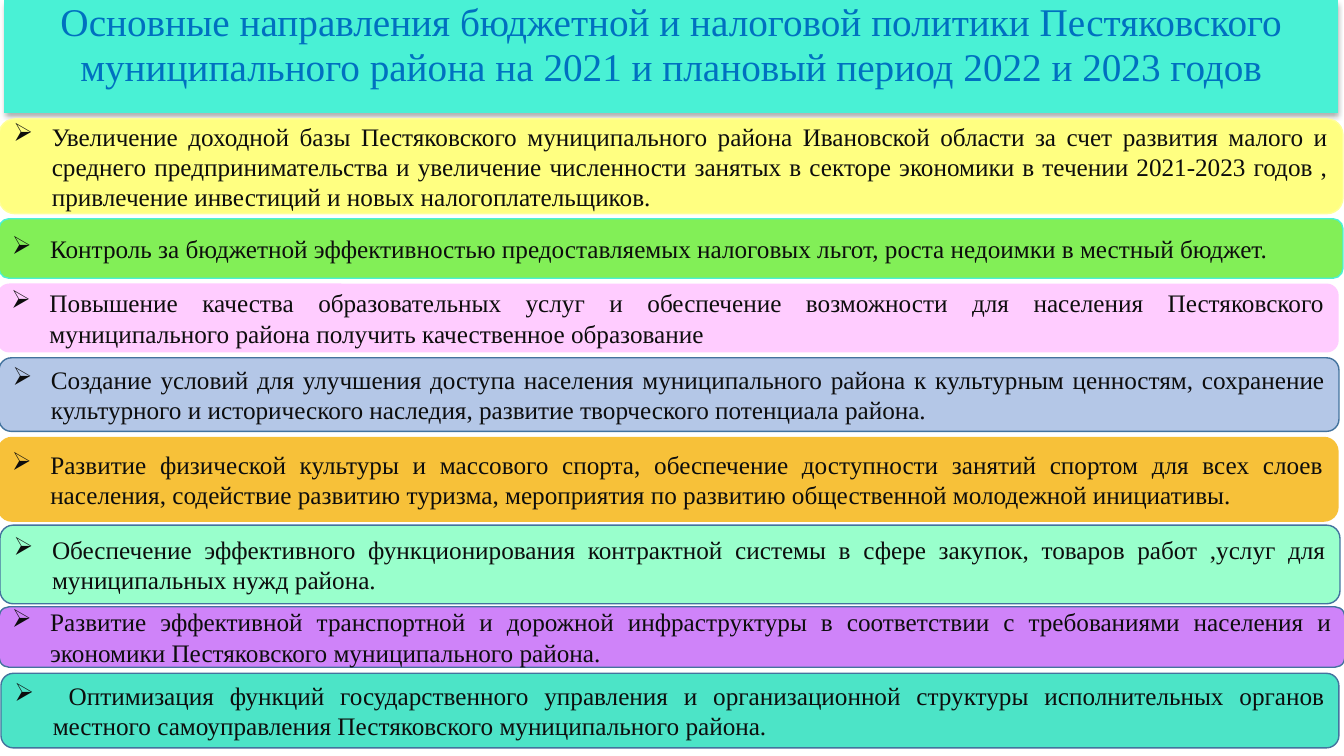
import pptx
import pptx.util
import pptx.dml.color
import pptx.enum.shapes
import pptx.enum.text
import pptx.oxml
import pptx.oxml.ns
from pptx.util import Inches

FONT = "Times New Roman"
NS = pptx.oxml.ns.nsdecls("a")


def rgb(code):
    return pptx.dml.color.RGBColor.from_string(code)


deck = pptx.Presentation()
deck.slide_width = Inches(13.33)
deck.slide_height = Inches(7.5)
slide = deck.slides.add_slide(deck.slide_layouts[5])

heading = slide.shapes.title
heading.left, heading.top = Inches(0.04), Inches(0)
heading.width, heading.height = Inches(13.23), Inches(1.12)
heading.fill.solid()
heading.fill.fore_color.rgb = rgb("49F1D5")
heading.shadow.inherit = False
heading._element.spPr.find(pptx.oxml.ns.qn("a:effectLst")).append(pptx.oxml.parse_xml(
    f'<a:outerShdw {NS} blurRad="44450" dist="27940" dir="5400000" algn="ctr" rotWithShape="0">'
    '<a:srgbClr val="000000"><a:alpha val="32000"/></a:srgbClr></a:outerShdw>'))
heading_text = heading.text_frame
heading_text.text = ("Основные направления бюджетной и налоговой политики Пестяковского "
                     "муниципального района на 2021 и плановый период 2022 и 2023 годов")
heading_text.word_wrap = True
heading_text.auto_size = pptx.enum.text.MSO_AUTO_SIZE.NONE
heading_text.vertical_anchor = pptx.enum.text.MSO_ANCHOR.TOP
heading_text.margin_top = Inches(0)
heading_line = heading_text.paragraphs[0]
heading_line.alignment = pptx.enum.text.PP_ALIGN.CENTER
heading_line.line_spacing = 0.96
heading_line.font.name = FONT
heading_line.font.size = pptx.util.Pt(28)
heading_line.font.color.rgb = rgb("0070C0")

directions = [
    (-0.01, 1.18, 13.33, 0.94, "FFFF81", "FFFF99",
     "Увеличение доходной базы Пестяковского муниципального района Ивановской области за счет "
     "развития малого и среднего предпринимательства и увеличение численности занятых в секторе "
     "экономики в течении 2021-2023 годов , привлечение инвестиций и новых налогоплательщиков."),
    (-0.01, 2.17, 13.33, 0.59, "82EF57", "49F1D5",
     "Контроль за бюджетной эффективностью предоставляемых налоговых льгот, "
     "роста недоимки в местный бюджет."),
    (-0.02, 2.82, 13.29, 0.67, "FFCCFF", "FFCCFF",
     "Повышение качества образовательных услуг и обеспечение возможности для населения "
     "Пестяковского муниципального района получить качественное образование"),
    (-0.01, 3.55, 13.29, 0.73, "B4C7E7", "43739E",
     "Создание условий для улучшения доступа населения муниципального района к культурным "
     "ценностям, сохранение культурного и исторического наследия, развитие творческого "
     "потенциала района."),
    (-0.02, 4.34, 13.29, 0.83, "F7C139", "F7C139",
     "Развитие физической культуры и массового спорта, обеспечение доступности занятий спортом "
     "для всех слоев населения, содействие развитию туризма, мероприятия по развитию "
     "общественной молодежной инициативы."),
    (0, 5.21, 13.29, 0.78, "99FFCC", "43739E",
     "Обеспечение эффективного функционирования контрактной системы в сфере закупок, товаров "
     "работ ,услуг для муниципальных нужд района."),
    (-0.01, 6.02, 13.35, 0.6, "CF83F9", "43739E",
     "Развитие эффективной транспортной и дорожной инфраструктуры в соответствии с "
     "требованиями населения и экономики Пестяковского муниципального района."),
    (0.01, 6.68, 13.27, 0.74, "4CE4C7", "43739E",
     " Оптимизация функций государственного управления и организационной структуры "
     "исполнительных органов местного самоуправления Пестяковского муниципального района."),
]

for left, top, width, height, fill, outline, wording in directions:
    band = slide.shapes.add_shape(
        pptx.enum.shapes.MSO_SHAPE.ROUNDED_RECTANGLE,
        Inches(left), Inches(top), Inches(width), Inches(height))
    band.shadow.inherit = False
    band.fill.solid()
    band.fill.fore_color.rgb = rgb(fill)
    band.line.color.rgb = rgb(outline)
    band.line.width = pptx.util.Pt(1)
    band.text_frame.word_wrap = True
    band.text_frame.vertical_anchor = pptx.enum.text.MSO_ANCHOR.MIDDLE
    direction = band.text_frame.paragraphs[0]
    direction.text = wording
    direction.alignment = pptx.enum.text.PP_ALIGN.JUSTIFY
    layout = direction._p.get_or_add_pPr()
    layout.set("marL", str(Inches(0.38)))
    layout.set("indent", str(Inches(-0.38)))
    layout.append(pptx.oxml.parse_xml(f'<a:buChar {NS} char="➢"/>'))
    direction.font.name = FONT
    direction.font.size = pptx.util.Pt(18)
    direction.font.color.rgb = rgb("0D0D0D")

deck.save("out.pptx")
